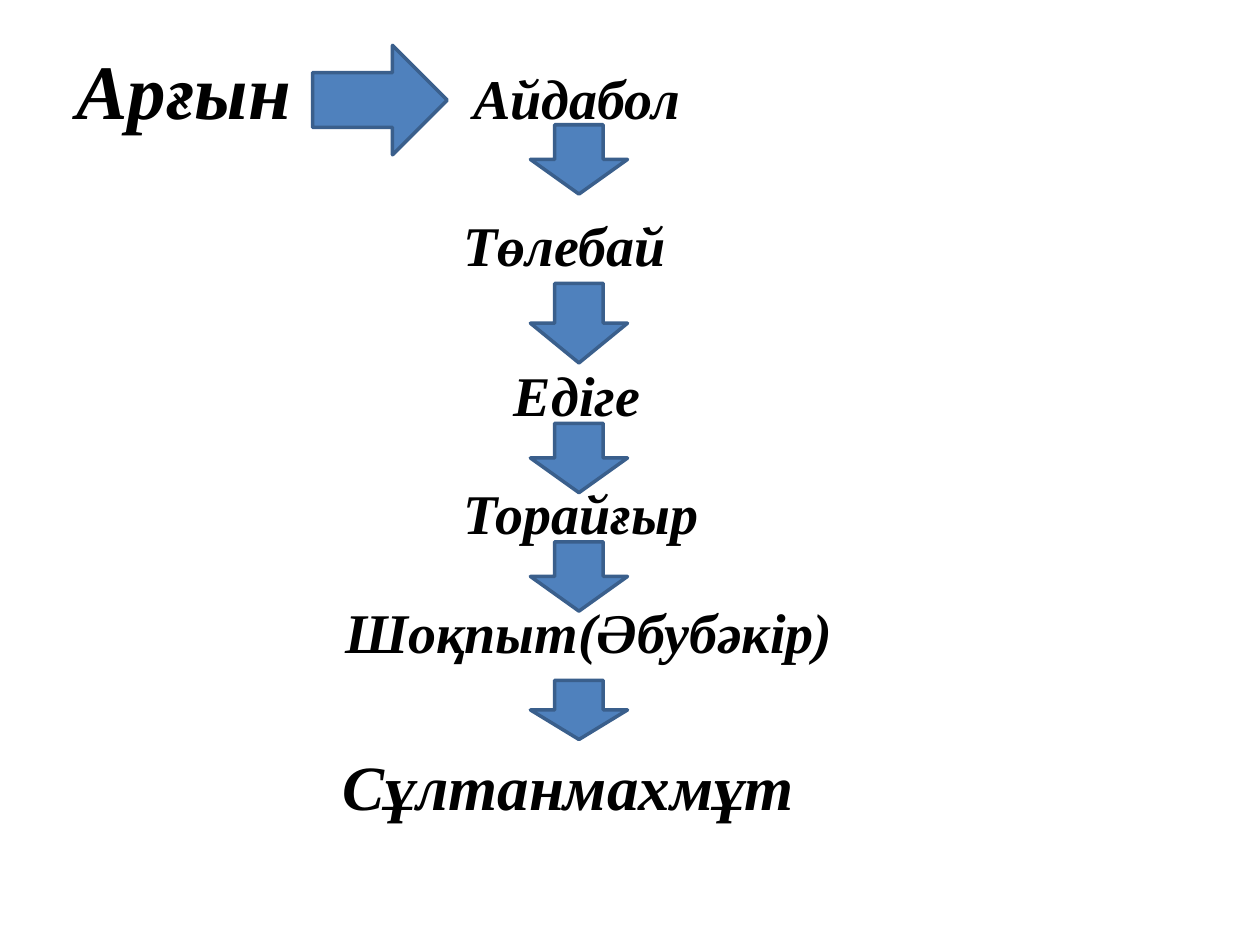
from typing import NamedTuple

from pptx import Presentation
from pptx.dml.color import RGBColor
from pptx.enum import shapes
from pptx.util import Pt

BLACK = RGBColor(0x00, 0x00, 0x00)
BLUE = RGBColor(0x4F, 0x81, 0xBD)
DARK_BLUE = RGBColor(0x3A, 0x5F, 0x8C)
FONT = "Times New Roman"

DOWN_LEFT, DOWN_WIDTH = 303.1, 55.5


class Name(NamedTuple):
    text: str
    left: float
    top: float
    width: float
    height: float = 46
    size: float = 32


class Arrow(NamedTuple):
    top: float
    height: float
    left: float = DOWN_LEFT
    width: float = DOWN_WIDTH
    kind: shapes.MSO_SHAPE = shapes.MSO_SHAPE.DOWN_ARROW


NAMES = [
    Name("Арғын", 36.7, 20.9, 147.6, 60.5, 44),
    Name("Айдабол", 263.5, 32.5, 209.5),
    Name("Төлебай", 257.8, 116.6, 131),
    Name("Едіге", 286.6, 202.3, 87.8),
    Name("Торайғыр", 257.8, 270, 149.8),
    Name("Шоқпыт(Әбубәкір)", 190.1, 337.7, 295.9),
    Name("Сұлтанмахмұт", 188.8, 423.4, 290.7, 72.7, 36),
]

ARROWS = [
    Arrow(25.9, 62.6, 178.6, 77, shapes.MSO_SHAPE.RIGHT_ARROW),
    Arrow(71.3, 39.6),
    Arrow(162, 45.4),
    Arrow(241.9, 39.6),
    Arrow(309.6, 39.6),
    Arrow(388.8, 33.8),
]


def add_name(s, name: Name) -> None:
    box = s.shapes.add_textbox(Pt(name.left), Pt(name.top),
                               Pt(name.width), Pt(name.height))
    tf = box.text_frame
    tf.word_wrap = True
    p = tf.paragraphs[0]
    p.text = name.text
    p.font.name = FONT
    p.font.size = Pt(name.size)
    p.font.bold = True
    p.font.italic = True
    p.font.color.rgb = BLACK


def add_arrow(s, arrow: Arrow) -> None:
    sp = s.shapes.add_shape(arrow.kind, Pt(arrow.left), Pt(arrow.top),
                            Pt(arrow.width), Pt(arrow.height))
    sp.shadow.inherit = False
    sp.fill.solid()
    sp.fill.fore_color.rgb = BLUE
    sp.line.color.rgb = DARK_BLUE
    sp.line.width = Pt(2)


def main() -> None:
    prs = Presentation()
    prs.slide_width, prs.slide_height = Pt(720), Pt(540)
    s = prs.slides.add_slide(prs.slide_layouts[6])

    # Line of descent
    for name in NAMES:
        add_name(s, name)

    # Arrows from each ancestor to the next
    for arrow in ARROWS:
        add_arrow(s, arrow)

    prs.save("out.pptx")


if __name__ == "__main__":
    main()
